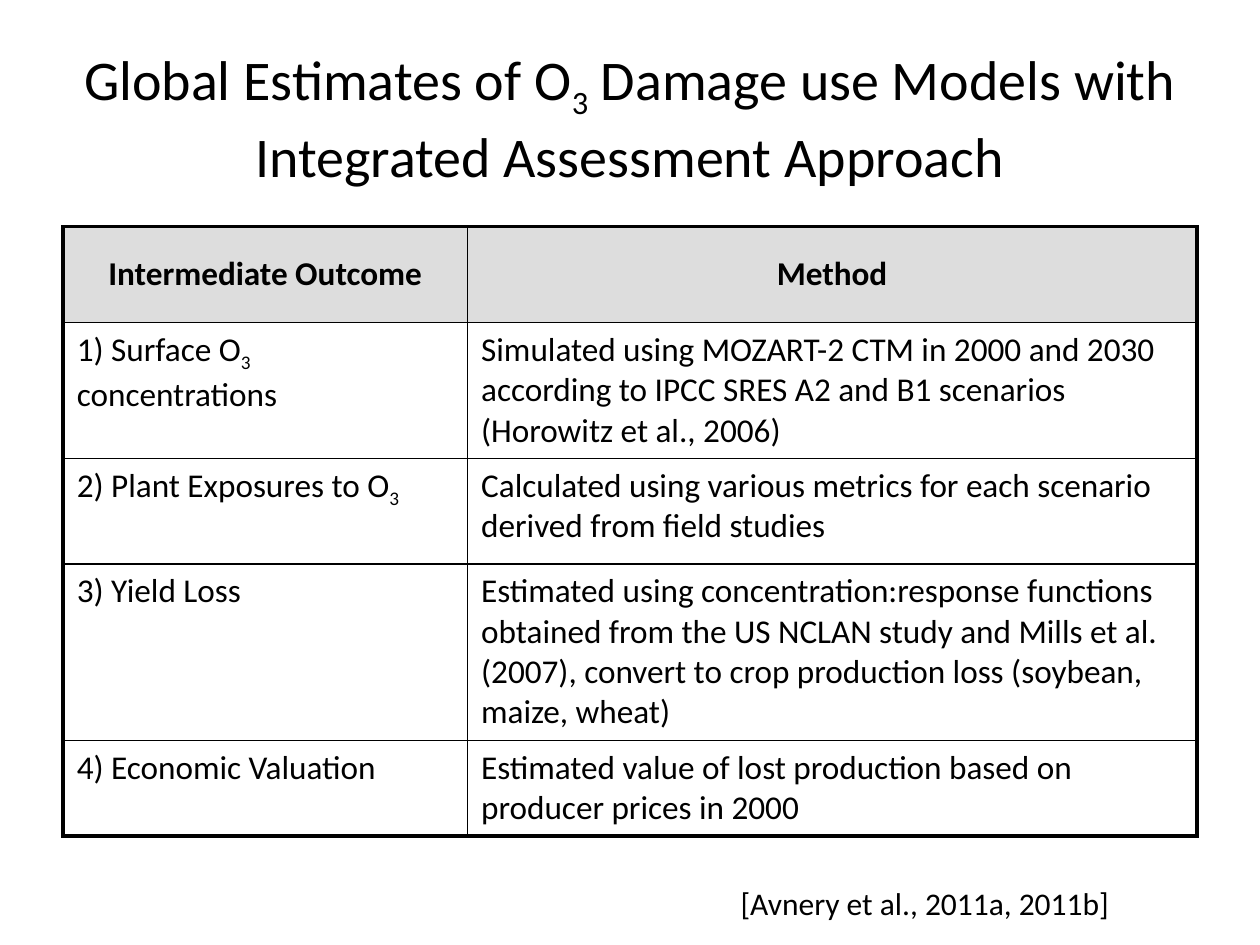
import pptx
import pptx.util
import pptx.dml.color
import pptx.enum.text
import pptx.oxml
import pptx.oxml.ns

Cm, Pt = pptx.util.Cm, pptx.util.Pt
Align = pptx.enum.text.PP_ALIGN
Anchor = pptx.enum.text.MSO_ANCHOR
NS = pptx.oxml.ns.nsdecls("a")
INK = {"text": "000000", "head": "DDDDDD", "body": "FFFFFF"}
ROWS = [
    ("Intermediate Outcome", "Method"),
    ("1) Surface O|3| concentrations",
     "Simulated using MOZART-2 CTM in 2000 and 2030 according to IPCC SRES A2 "
     "and B1 scenarios (Horowitz et al., 2006)"),
    ("2) Plant Exposures to O|3",
     "Calculated using various metrics for each scenario derived from field studies"),
    ("3) Yield Loss",
     "Estimated using concentration:response functions obtained from the US NCLAN "
     "study and Mills et al. (2007), convert to crop production loss (soybean, maize, wheat)"),
    ("4) Economic Valuation",
     "Estimated value of lost production based on producer prices in 2000"),
]
WIDTHS = [8.15, 14.71]
HEIGHTS = [1.93, 2.59, 2.13, 1.91, 1.8]


def color(name):
    """Return the named colour."""
    return pptx.dml.color.RGBColor.from_string(INK[name])


class Deck:
    """Hold the style and the current slide."""

    def __init__(self, font):
        self.font = font
        self.show = pptx.Presentation()
        self.show.slide_width, self.show.slide_height = Cm(25.4), Cm(19.05)
        self.slide = self.show.slides.add_slide(self.show.slide_layouts[5])

    def label(self, frame, text, size, bold=False, align=Align.LEFT):
        """Fill a frame with text whose odd parts between bars are subscripts."""
        para = frame.paragraphs[0]
        parts = text.split("|")
        para.text = parts[0]
        para.alignment = align
        for part in parts[1:]:
            para.add_run().text = part
        for i, run in enumerate(para.runs):
            run.font.name, run.font.size, run.font.bold = self.font, Pt(size), bold
            run.font.color.rgb = color("text")
            if i % 2:
                run.font._element.set("baseline", "-25000")
        return para

    def title(self, text, box, size):
        """Place and fill the title."""
        shape = self.slide.shapes.title
        shape.left, shape.top, shape.width, shape.height = map(Cm, box)
        frame = shape.text_frame
        frame.auto_size = pptx.enum.text.MSO_AUTO_SIZE.NONE
        frame.vertical_anchor = Anchor.MIDDLE
        self.label(frame, text, size, align=Align.CENTER)

    def note(self, text, box, size):
        """Add a one-line text box."""
        frame = self.slide.shapes.add_textbox(*map(Cm, box)).text_frame
        frame.word_wrap = False
        self.label(frame, text, size)

    def edge(self, cell, sides):
        """Draw the cell borders, given as widths by side."""
        props = cell._tc.get_or_add_tcPr()
        for side, width in sides.items():
            props.append(pptx.oxml.parse_xml(
                f'<a:ln{side} {NS} w="{int(Pt(width))}"><a:solidFill>'
                f'<a:srgbClr val="{INK["text"]}"/></a:solidFill></a:ln{side}>'))

    def table(self, rows, box, widths, heights, size):
        """Add a table with a heavy frame and a shaded header."""
        grid = self.slide.shapes.add_table(len(rows), len(widths), *map(Cm, box)).table
        grid.first_row = grid.horz_banding = False
        for col, width in zip(grid.columns, widths):
            col.width = Cm(width)
        for r, (row, height) in enumerate(zip(rows, heights)):
            grid.rows[r].height = Cm(height)
            for c, text in enumerate(row):
                cell, head = grid.cell(r, c), r == 0
                outer = {"L": c == 0, "R": c == len(widths) - 1,
                         "T": head, "B": r == len(rows) - 1}
                self.edge(cell, {k: 2.25 if v else 1 for k, v in outer.items()})
                cell.fill.solid()
                cell.fill.fore_color.rgb = color("head" if head else "body")
                cell.margin_left = cell.margin_right = Cm(0.28)
                cell.margin_top = cell.margin_bottom = Cm(0.15)
                cell.vertical_anchor = Anchor.MIDDLE if head else Anchor.TOP
                para = self.label(cell.text_frame, text, size, head,
                                  Align.CENTER if head else Align.LEFT)
                para._p.get_or_add_pPr().append(pptx.oxml.parse_xml(
                    f'<a:spcBef {NS}><a:spcPct val="20000"/></a:spcBef>'))


def main():
    """Build and save the slide."""
    deck = Deck("Calibri")
    deck.title("Global Estimates of O|3| Damage use Models with Integrated "
               "Assessment Approach", (1.27, 0.76, 22.86, 3.18), 32)
    deck.table(ROWS, (1.27, 4.57, 22.86, 12.19), WIDTHS, HEIGHTS, 19)
    deck.note("[Avnery et al., 2011a, 2011b]", (14.68, 17.7, 8.03, 1.02), 18)
    deck.show.save("out.pptx")


if __name__ == "__main__":
    main()
